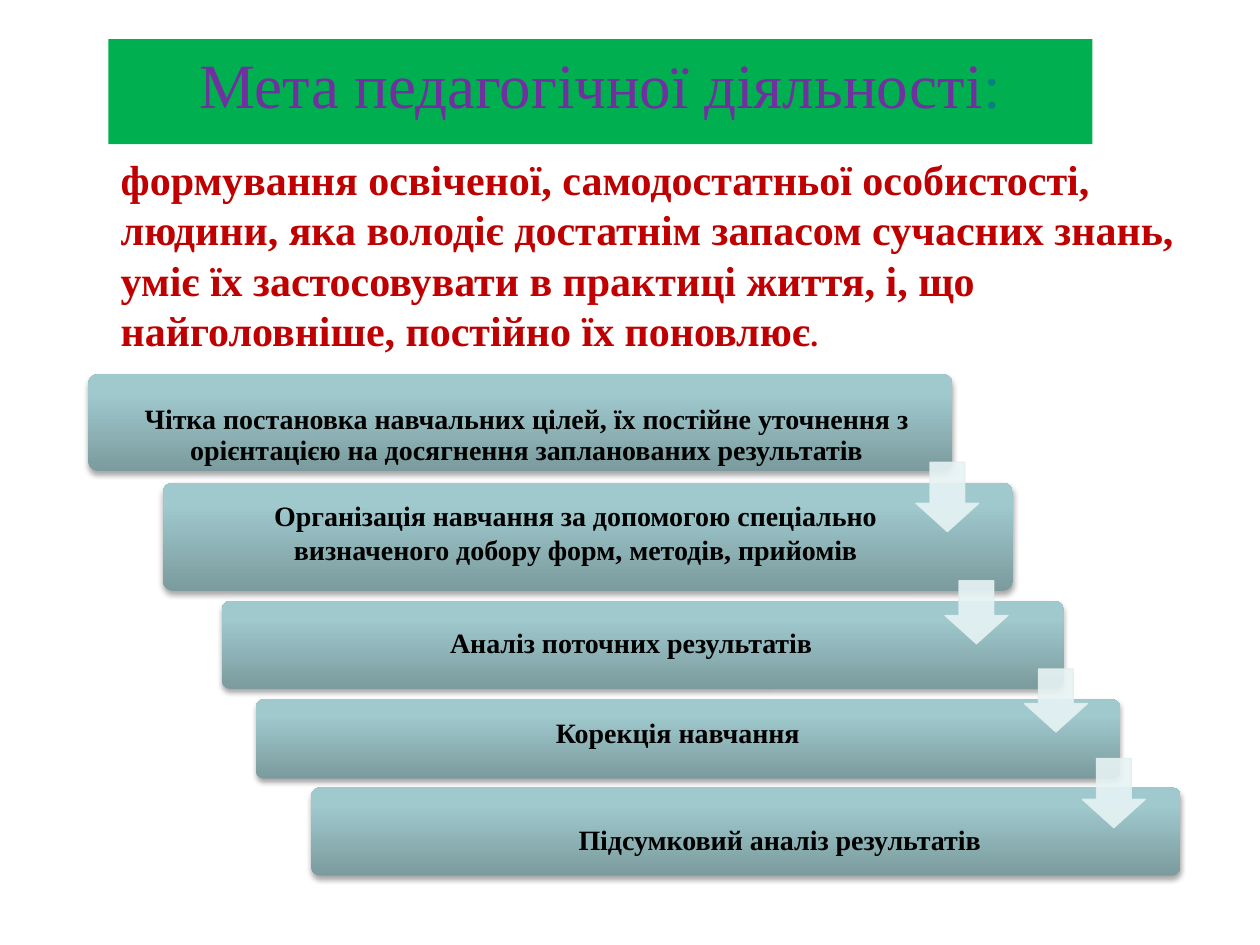
from lxml import etree
from pptx import Presentation
from pptx.dml.color import RGBColor
from pptx.enum.shapes import MSO_SHAPE
from pptx.enum.text import MSO_ANCHOR, MSO_AUTO_SIZE, PP_ALIGN
from pptx.oxml import parse_xml
from pptx.oxml.ns import qn
from pptx.util import Pt

ROUND, DOWN = MSO_SHAPE.ROUNDED_RECTANGLE, MSO_SHAPE.DOWN_ARROW
TOP, MID = MSO_ANCHOR.TOP, MSO_ANCHOR.MIDDLE
LEFT, MIDDLE = PP_ALIGN.LEFT, PP_ALIGN.CENTER
GROW, FIXED = MSO_AUTO_SIZE.SHAPE_TO_FIT_TEXT, MSO_AUTO_SIZE.NONE
NS = "http://schemas.openxmlformats.org/drawingml/2006/main"
FONT = "Times New Roman"

TITLE = [("Мета педагогічної діяльності", 36, "7030A0"), (":", 36, "09817E")]
GOAL = [
    ("формування освіченої, самодостатньої особистості, людини, яка володіє "
     "достатнім запасом сучасних знань, уміє їх застосовувати в практиці життя, "
     "і, що найголовніше, постійно їх поновлює", 24, "C00000"),
    (".", 18, "C00000"),
]
STEPS = [
    {"text": "Чітка постановка навчальних цілей, їх постійне уточнення з "
             "орієнтацією на досягнення запланованих результатів",
     "bar": (50.4, 213.8, 493.9, 55.4), "label": (61.9, 224.6, 478.1, 49),
     "style": {"anchor": MID, "inset": 5, "space": 0.9, "fit": FIXED}},
    {"text": "Організація навчання за допомогою спеціально визначеного добору "
             "форм, методів, прийомів",
     "bar": (92.9, 275.8, 486, 61.9), "label": (123.8, 281.5, 410.4, 46.1),
     "style": {}},
    {"text": "Аналіз поточних результатів",
     "bar": (126.7, 343.4, 481, 50.4), "label": (248.4, 354.2, 224.6, 26.6),
     "style": {"wrap": False}},
    {"text": "Корекція навчання",
     "bar": (146.2, 399.6, 493.9, 45.4), "label": (309.6, 405.4, 155.5, 26.6),
     "style": {"wrap": False}},
    {"text": "Підсумковий аналіз результатів",
     "bar": (177.8, 450, 496.8, 50.4), "label": (321.8, 466.6, 247.7, 26.6),
     "style": {"wrap": False}},
]
ARROWS = [(523.4, 264.2, 39.6), (540, 331.9, 36), (585.4, 382.3, 36), (618.5, 433.4, 39.6)]
STOPS = [(0, "7B9B9E"), (80, "9FC9CD"), (100, "9FCBCF")]


def color(code):
    """Turn a hex string into a colour."""
    return RGBColor.from_string(code)


def points(box):
    """Turn a row of numbers into point lengths."""
    return [Pt(side) for side in box]


def write(shape, runs, bold=True, align=MIDDLE, anchor=TOP, inset=None,
          space=None, wrap=True, fit=GROW):
    """Fill a shape with one paragraph of (text, size, colour) runs."""
    frame = shape.text_frame
    frame.word_wrap, frame.auto_size = wrap, fit
    frame.vertical_anchor = anchor
    if inset is not None:
        frame.margin_left = frame.margin_right = Pt(inset)
        frame.margin_top = frame.margin_bottom = Pt(inset)
    para = frame.paragraphs[0]
    para.alignment = align
    if space:
        para.line_spacing = space
    for text, size, code in runs:
        run = para.add_run()
        run.text = text
        font = run.font
        font.name, font.size, font.bold = FONT, Pt(size), bold
        font.color.rgb = color(code)


def draw_bar(slide, box):
    """Draw a rounded bar with a vertical gradient and a soft shadow."""
    bar = slide.shapes.add_shape(ROUND, *points(box))
    bar.adjustments[0] = 0.1
    bar.line.fill.background()
    bar.fill.background()
    props = bar.fill._xPr
    stops = "".join(f'<a:gs pos="{pos * 1000}"><a:srgbClr val="{code}"/></a:gs>'
                    for pos, code in STOPS)
    props.replace(props.find(qn("a:noFill")), parse_xml(
        f'<a:gradFill xmlns:a="{NS}" rotWithShape="1"><a:gsLst>{stops}</a:gsLst>'
        '<a:lin ang="16200000" scaled="0"/></a:gradFill>'))
    props.append(parse_xml(
        f'<a:effectLst xmlns:a="{NS}"><a:outerShdw blurRad="{Pt(3.1)}" '
        f'dist="{Pt(1.8)}" dir="5400000" rotWithShape="0"><a:srgbClr val="000000">'
        '<a:alpha val="35000"/></a:srgbClr></a:outerShdw></a:effectLst>'))


def draw_arrow(slide, left, top, height):
    """Draw a pale, slightly clear arrow to the next step."""
    arrow = slide.shapes.add_shape(DOWN, *points((left, top, 36, height)))
    arrow.shadow.inherit = False
    arrow.adjustments[0], arrow.adjustments[1] = 0.55, 0.45
    arrow.line.width = Pt(0.75)
    arrow.fill.solid()
    arrow.fill.fore_color.rgb = color("E7F3F4")
    arrow.line.color.rgb = color("E2EEEF")
    for tint in arrow.fill._xPr.iter(qn("a:srgbClr")):
        etree.SubElement(tint, qn("a:alpha"), val="90000")


def main():
    """Build the slide and save it."""
    deck = Presentation()
    deck.slide_width, deck.slide_height = Pt(720), Pt(540)
    slide = deck.slides.add_slide(deck.slide_layouts[5])

    title = slide.shapes.title
    title.left, title.top, title.width, title.height = points((61.9, 22.3, 562.3, 51.1))
    title.fill.solid()
    title.fill.fore_color.rgb = color("00B050")
    write(title, TITLE, bold=False)

    goal = slide.shapes.add_textbox(*points((61.9, 84.2, 630, 123.8)))
    write(goal, GOAL, align=LEFT)

    for step in STEPS:
        draw_bar(slide, step["bar"])
        label = slide.shapes.add_textbox(*points(step["label"]))
        write(label, [(step["text"], 16, "000000")], **step["style"])
    for spot in ARROWS:
        draw_arrow(slide, *spot)

    deck.save("out.pptx")


if __name__ == "__main__":
    main()
